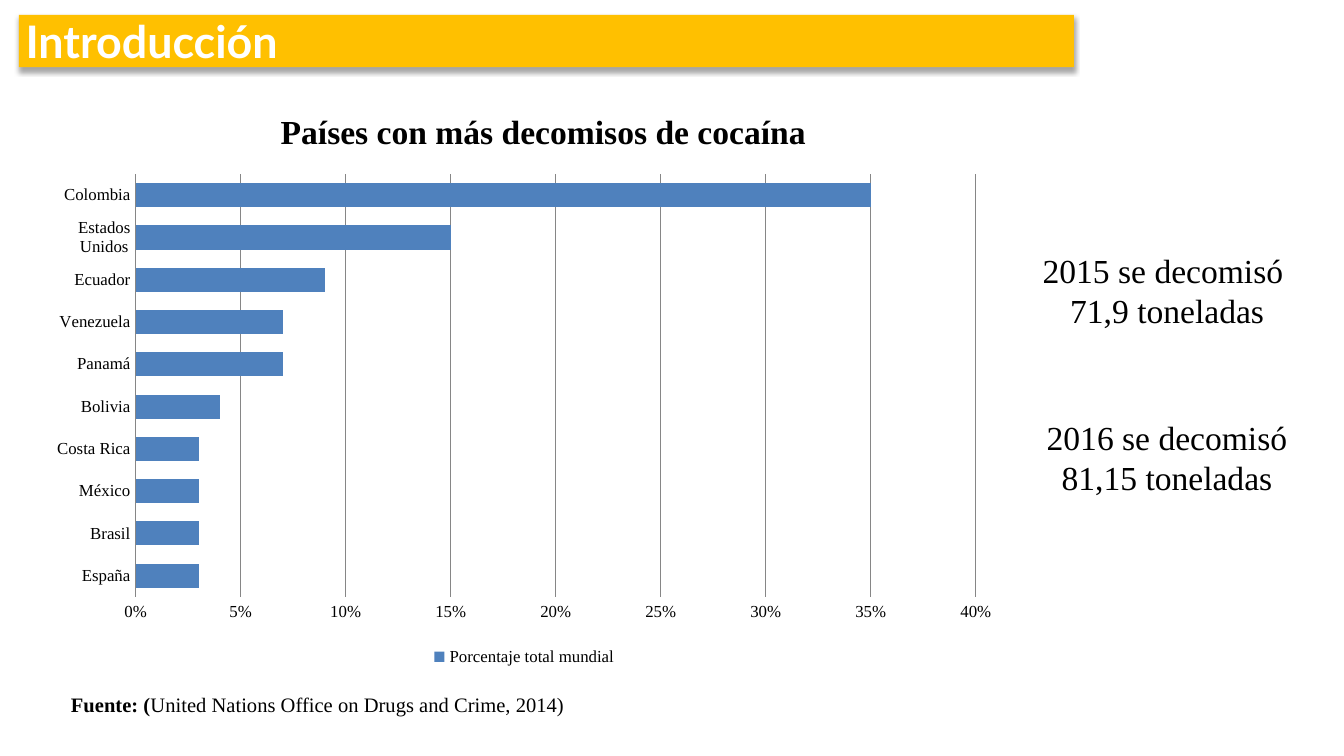
from dataclasses import dataclass

from lxml.etree import SubElement
from pptx import Presentation
from pptx.chart.data import CategoryChartData
from pptx.dml.color import RGBColor
from pptx.enum.chart import XL_CHART_TYPE, XL_LEGEND_POSITION, XL_TICK_MARK
from pptx.enum.shapes import MSO_SHAPE
from pptx.enum.text import MSO_ANCHOR, PP_ALIGN
from pptx.oxml.ns import qn
from pptx.util import Inches, Pt


@dataclass(frozen=True)
class Theme:
    gold: str = "FFC000"
    white: str = "FFFFFF"
    black: str = "000000"
    blue: str = "4F81BD"
    gray: str = "868686"
    head: str = "Lato"
    body: str = "Times New Roman"
    banner: int = 24
    large: int = 18
    note: int = 11
    small: int = 9


THEME = Theme()

SHARES = {
    "España": 0.03, "Brasil": 0.03, "México": 0.03, "Costa Rica": 0.03,
    "Bolivia": 0.04, "Panamá": 0.07, "Venezuela": 0.07, "Ecuador": 0.09,
    "Estados Unidos": 0.15, "Colombia": 0.35,
}


def color(code):
    return RGBColor.from_string(code)


def style(font, size, name=THEME.body, code=THEME.black, bold=False):
    font.size = Pt(size)
    font.name = name
    font.bold = bold
    font.color.rgb = color(code)


def box(at):
    return [Inches(n) for n in at]


def shade(shape):
    """Soft shadow straight below the shape."""
    effects = shape._element.spPr.find(qn("a:effectLst"))
    outer = SubElement(effects, qn("a:outerShdw"), blurRad=str(Pt(3)),
                       dist=str(Pt(1.8)), dir="5400000", rotWithShape="0")
    tint = SubElement(outer, qn("a:srgbClr"), val=THEME.black)
    SubElement(tint, qn("a:alpha"), val="35000")


def add_banner(slide, at, text):
    bar = slide.shapes.add_shape(MSO_SHAPE.RECTANGLE, *box(at))
    bar.shadow.inherit = False
    shade(bar)
    bar.fill.solid()
    bar.fill.fore_color.rgb = color(THEME.gold)
    bar.line.fill.background()
    frame = bar.text_frame
    frame.margin_left = frame.margin_right = Inches(0.05)
    frame.vertical_anchor = MSO_ANCHOR.MIDDLE
    frame.text = text
    line = frame.paragraphs[0]
    line.alignment = PP_ALIGN.LEFT
    style(line.runs[0].font, THEME.banner, THEME.head, THEME.white, True)


def add_label(slide, at, text, size, bold=False, align=PP_ALIGN.LEFT,
              wrap=False):
    frame = slide.shapes.add_textbox(*box(at)).text_frame
    frame.word_wrap = wrap
    frame.text = text
    for line in frame.paragraphs:
        line.alignment = align
        style(line.runs[0].font, size, bold=bold)
    return frame


def add_source(slide, at, lead, text):
    frame = add_label(slide, at, lead, THEME.note, bold=True, wrap=True)
    line = frame.paragraphs[0]
    line.space_after = Pt(10)
    run = line.add_run()
    run.text = text
    style(run.font, THEME.note)


def add_bars(slide, at, name, shares):
    data = CategoryChartData(number_format="0%")
    data.categories = list(shares)
    data.add_series(name, list(shares.values()))
    chart = slide.shapes.add_chart(
        XL_CHART_TYPE.BAR_CLUSTERED, *box(at), data).chart
    chart.has_title = False
    style(chart.font, THEME.small)

    # Bars
    plot = chart.plots[0]
    plot.vary_by_categories = False
    plot.gap_width = 75
    plot.overlap = -25
    fill = plot.series[0].format.fill
    fill.solid()
    fill.fore_color.rgb = color(THEME.blue)

    # Axes
    for axis in (chart.category_axis, chart.value_axis):
        axis.major_tick_mark = axis.minor_tick_mark = XL_TICK_MARK.NONE
        style(axis.tick_labels.font, THEME.small)
    names, scale = chart.category_axis, chart.value_axis
    names.has_major_gridlines = False
    scale.has_major_gridlines = True
    scale.minimum_scale, scale.maximum_scale = 0, 0.4
    scale.major_unit = 0.05
    scale.tick_labels.number_format = "0%"
    scale.tick_labels.number_format_is_linked = False
    scale.format.line.fill.background()
    for line in (names.format.line, scale.major_gridlines.format.line):
        line.color.rgb = color(THEME.gray)
        line.width = Pt(0.75)

    # Legend
    chart.has_legend = True
    chart.legend.position = XL_LEGEND_POSITION.BOTTOM
    chart.legend.include_in_layout = False
    style(chart.legend.font, THEME.small)


def main():
    # Wide slide, 16 by 9
    deck = Presentation()
    deck.slide_width = Inches(10)
    deck.slide_height = Inches(10 * 9 / 16)
    slide = deck.slides.add_slide(deck.slide_layouts[6])

    # Heading and chart
    add_banner(slide, (0.14, 0.11, 7.85, 0.39), "Introducción")
    add_bars(slide, (0.28, 1.22, 7.24, 3.78), "Porcentaje total mundial",
             SHARES)
    add_label(slide, (1.99, 0.78, 4.15, 0.4),
              "Países con más decomisos de cocaína", THEME.large, bold=True)

    # Source
    add_source(slide, (0.43, 5.1, 5, 0.29), "Fuente: (",
               "United Nations Office on Drugs and Crime, 2014)")

    # Yearly totals
    totals = (
        (7.65, 1.81, "2015 se decomisó \n71,9 toneladas"),
        (7.68, 3.05, "2016 se decomisó \n81,15 toneladas "),
    )
    for left, top, text in totals:
        add_label(slide, (left, top, 2.07, 0.71), text, THEME.large,
                  align=PP_ALIGN.CENTER)

    deck.save("out.pptx")


if __name__ == "__main__":
    main()
